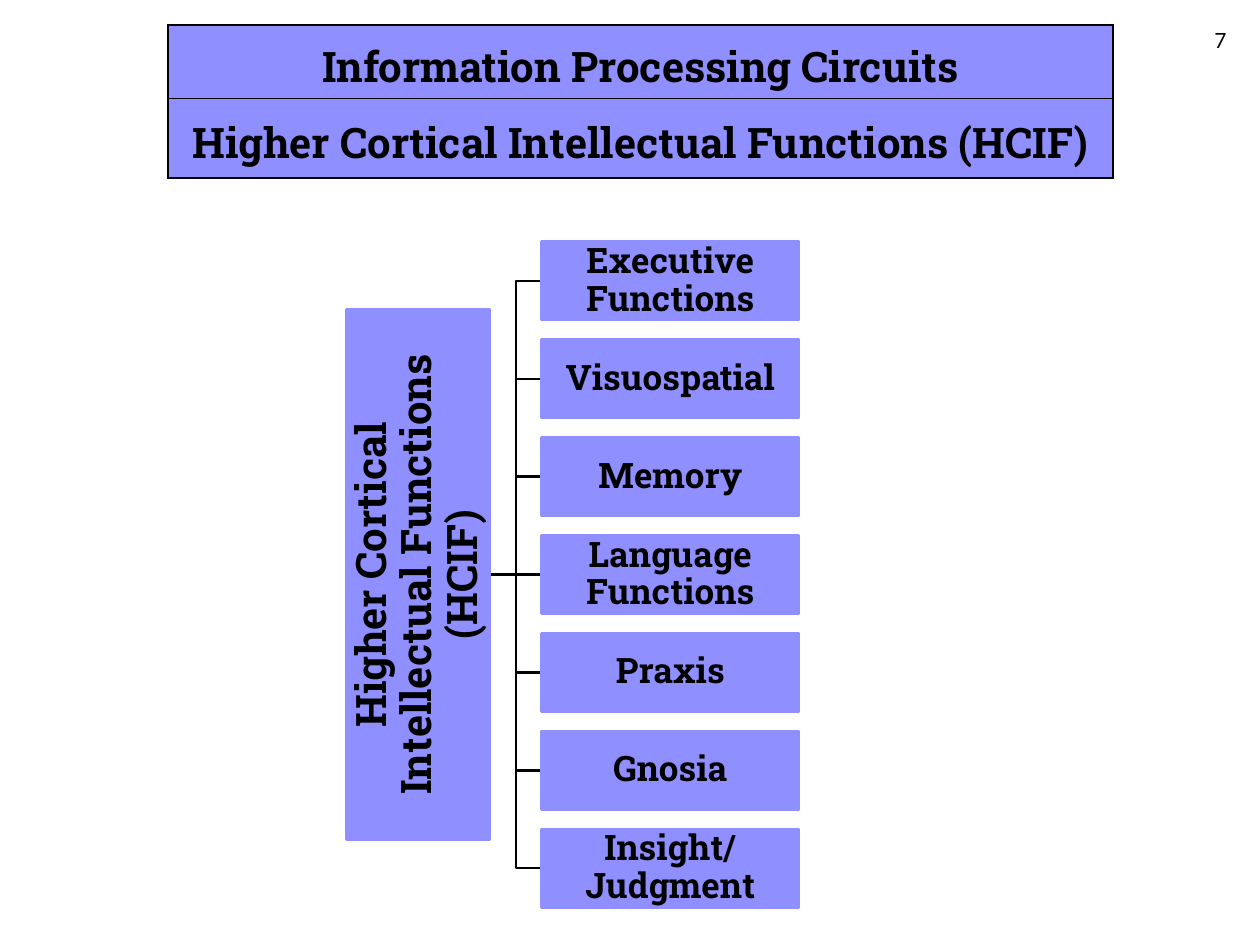
from lxml.etree import SubElement
from pptx import Presentation
from pptx.dml.color import RGBColor
from pptx.enum.shapes import MSO_CONNECTOR as Connector, MSO_SHAPE as Shape
from pptx.enum.text import MSO_ANCHOR as Anchor, PP_ALIGN as Align
from pptx.oxml.ns import qn
from pptx.util import Pt

LILAC = "8F8FFF"
BLACK = "000000"
SLAB = "Roboto Slab"
HEADINGS = ["Information Processing Circuits",
            "Higher Cortical Intellectual Functions (HCIF)"]
ROOT = "Higher Cortical Intellectual Functions (HCIF)"
FUNCTIONS = ["Executive Functions", "Visuospatial", "Memory", "Language Functions",
             "Praxis", "Gnosia", "Insight/ Judgment"]


def color(hex_text):
    return RGBColor.from_string(hex_text)


def paint(part, hex_text):
    part.fill.solid()
    part.fill.fore_color.rgb = color(hex_text)


def draw_line(part, hex_text):
    part.line.color.rgb = color(hex_text)
    part.line.width = Pt(1.5)


def write(frame, text, size, font=SLAB, bold=True, align=Align.CENTER, spacing=None):
    frame.word_wrap = True
    frame.text = text
    para = frame.paragraphs[0]
    para.alignment = align
    para.line_spacing = spacing
    for span in para.runs:
        span.font.size = Pt(size)
        span.font.name = font
        span.font.bold = bold
        span.font.color.rgb = color(BLACK)


def add_borders(cell):
    properties = cell._tc.get_or_add_tcPr()
    for index, side in enumerate(("lnL", "lnR", "lnT", "lnB")):
        border = properties.makeelement(qn(f"a:{side}"), {"w": str(Pt(1))})
        fill = SubElement(border, qn("a:solidFill"))
        SubElement(fill, qn("a:srgbClr"), val=BLACK)
        properties.insert(index, border)


def add_heading_table(page, left, top, width, row_heights):
    frame = page.shapes.add_table(len(HEADINGS), 1, Pt(left), Pt(top),
                                  Pt(width), Pt(sum(row_heights)))
    table = frame.table
    for row, height, text in zip(table.rows, row_heights, HEADINGS):
        row.height = Pt(height)
        cell = row.cells[0]
        cell.margin_left = cell.margin_right = Pt(5)
        cell.margin_top = cell.margin_bottom = 0
        cell.vertical_anchor = Anchor.MIDDLE
        paint(cell, LILAC)
        add_borders(cell)
        write(cell.text_frame, text, 24, spacing=1.15)


def add_node(page, text, left, top, width, height, size, margin):
    node = page.shapes.add_shape(Shape.RECTANGLE, Pt(left), Pt(top), Pt(width), Pt(height))
    node.shadow.inherit = False
    paint(node, LILAC)
    draw_line(node, LILAC)
    frame = node.text_frame
    frame.margin_left = frame.margin_right = Pt(margin)
    frame.margin_top = frame.margin_bottom = Pt(margin)
    frame.vertical_anchor = Anchor.MIDDLE
    write(frame, text, size, spacing=0.9)
    return node


def add_branch(page, start, root_y, end, leaf_y):
    if leaf_y == root_y:
        branch = page.shapes.add_connector(Connector.STRAIGHT, Pt(start), Pt(root_y),
                                           Pt(end), Pt(leaf_y))
        SubElement(branch._element.spPr, qn("a:effectLst"))
        draw_line(branch, BLACK)
        return
    spine = (start + end) / 2
    points = [(spine, root_y), (spine, leaf_y), (end, leaf_y)]
    builder = page.shapes.build_freeform(Pt(start), Pt(root_y))
    builder.add_line_segments([(Pt(x), Pt(y)) for x, y in points], close=False)
    branch = builder.convert_to_shape()
    branch.shadow.inherit = False
    branch.fill.background()
    draw_line(branch, BLACK)


def add_tree(page, left, top, width, height):
    root_width, root_length = 82, 303
    leaf_width, leaf_height = 147, 44.8
    leaf_left = left + width - leaf_width
    pitch = (height - leaf_height) / (len(FUNCTIONS) - 1)
    middle = len(FUNCTIONS) // 2
    centers = [top + leaf_height / 2 + pitch * index for index in range(len(FUNCTIONS))]
    for center in centers:
        add_branch(page, left + root_width, centers[middle], leaf_left, center)
    root = add_node(page, ROOT, left + (root_width - root_length) / 2,
                    centers[middle] - root_width / 2, root_length, root_width, 24, 1.2)
    root.rotation = 270
    for text, center in zip(FUNCTIONS, centers):
        add_node(page, text, leaf_left, center - leaf_height / 2,
                 leaf_width, leaf_height, 20, 1)


def add_page_number(page, left, top, width, height):
    box = page.shapes.add_textbox(Pt(left), Pt(top), Pt(width), Pt(height))
    write(box.text_frame, "7", 12, font="Lato", bold=False, align=Align.RIGHT)


def main():
    deck = Presentation()
    deck.slide_width, deck.slide_height = Pt(720), Pt(540)
    page = deck.slides.add_slide(deck.slide_layouts[6])
    add_tree(page, 198, 138.2, 258.6, 380.3)
    add_heading_table(page, 96, 14.2, 540, [42, 45.6])
    add_page_number(page, 648, 12.2, 60, 19.4)
    deck.save("out.pptx")


if __name__ == "__main__":
    main()
